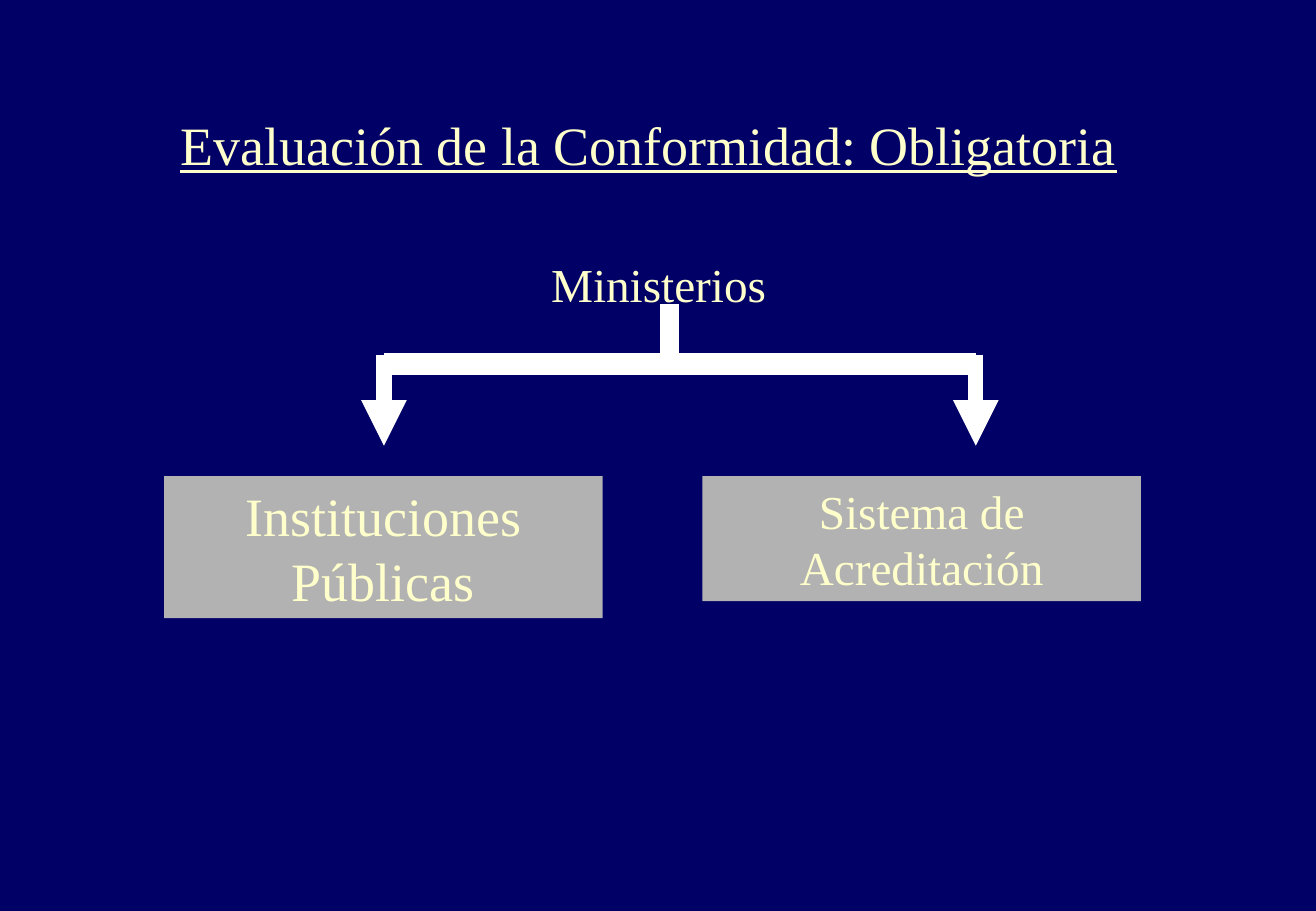
from dataclasses import dataclass

from lxml.etree import SubElement
from pptx import Presentation
from pptx.dml.color import RGBColor
from pptx.enum.shapes import MSO_CONNECTOR, MSO_SHAPE
from pptx.enum.text import MSO_ANCHOR, PP_ALIGN
from pptx.oxml.ns import qn
from pptx.util import Inches, Pt


@dataclass(frozen=True)
class Theme:
    background: RGBColor = RGBColor(0x00, 0x00, 0x66)
    text: RGBColor = RGBColor(0xFF, 0xFF, 0xCC)
    line: RGBColor = RGBColor(0xFF, 0xFF, 0xFF)
    box: RGBColor = RGBColor(0xB2, 0xB2, 0xB2)
    font: str = "Times New Roman"
    large: int = 32
    medium: int = 28


THEME = Theme()


def write_text(shape, text, size, underline=False):
    frame = shape.text_frame
    frame.word_wrap = True
    frame.text = text
    paragraph = frame.paragraphs[0]
    paragraph.alignment = PP_ALIGN.CENTER
    font = paragraph.runs[0].font
    font.name = THEME.font
    font.size = Pt(size)
    font.color.rgb = THEME.text
    font.underline = underline


def add_label(slide, text, center, top, width, size, underline=False):
    shape = slide.shapes.add_textbox(
        Inches(center - width / 2), Inches(top), Inches(width), Inches(0.6)
    )
    write_text(shape, text, size, underline)
    shape.text_frame.vertical_anchor = MSO_ANCHOR.TOP


def add_box(slide, text, left, height, size):
    shape = slide.shapes.add_shape(
        MSO_SHAPE.RECTANGLE, Inches(left), Inches(3.92), Inches(3.61), Inches(height)
    )
    shape.shadow.inherit = False
    shape.fill.solid()
    shape.fill.fore_color.rgb = THEME.box
    shape.line.fill.background()
    write_text(shape, text, size)
    shape.text_frame.vertical_anchor = MSO_ANCHOR.MIDDLE


def add_line(slide, start, end, weight, arrow=False):
    points = [Inches(value) for value in (*start, *end)]
    connector = slide.shapes.add_connector(MSO_CONNECTOR.STRAIGHT, *points)
    connector.line.color.rgb = THEME.line
    connector.line.width = Pt(weight)
    if arrow:
        SubElement(connector.line._get_or_add_ln(), qn("a:tailEnd"), type="triangle")
    SubElement(connector._element.spPr, qn("a:effectLst"))


def main():
    presentation = Presentation()
    presentation.slide_width = Inches(10.83)
    presentation.slide_height = Inches(7.5)
    slide = presentation.slides.add_slide(presentation.slide_layouts[6])
    slide.background.fill.solid()
    slide.background.fill.fore_color.rgb = THEME.background

    title = "Evaluación de la Conformidad: Obligatoria"
    add_label(slide, title, 5.34, 0.87, 9.2, THEME.large, underline=True)
    add_label(slide, "Ministerios", 5.42, 2.05, 3, THEME.medium)

    left_branch, right_branch = 3.16, 8.03
    add_line(slide, (5.51, 2.5), (5.51, 3), 11)
    add_line(slide, (left_branch, 3), (right_branch, 3), 13)
    for branch in (left_branch, right_branch):
        add_line(slide, (branch, 2.92), (branch, 3.67), 9, arrow=True)

    add_box(slide, "Instituciones Públicas", 1.35, 1.17, THEME.large)
    add_box(slide, "Sistema de Acreditación", 5.78, 1.03, THEME.medium)

    presentation.save("out.pptx")


if __name__ == "__main__":
    main()
